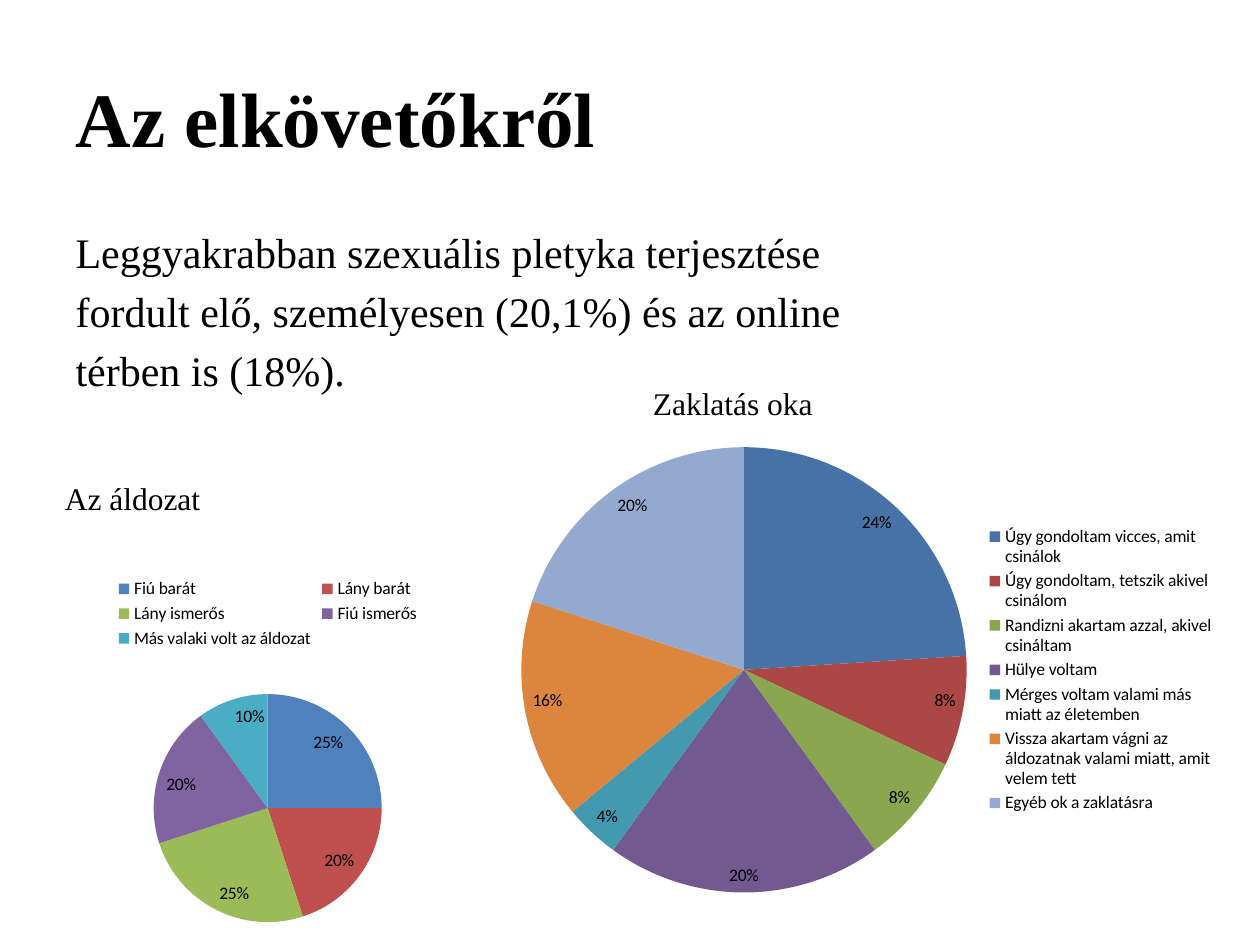
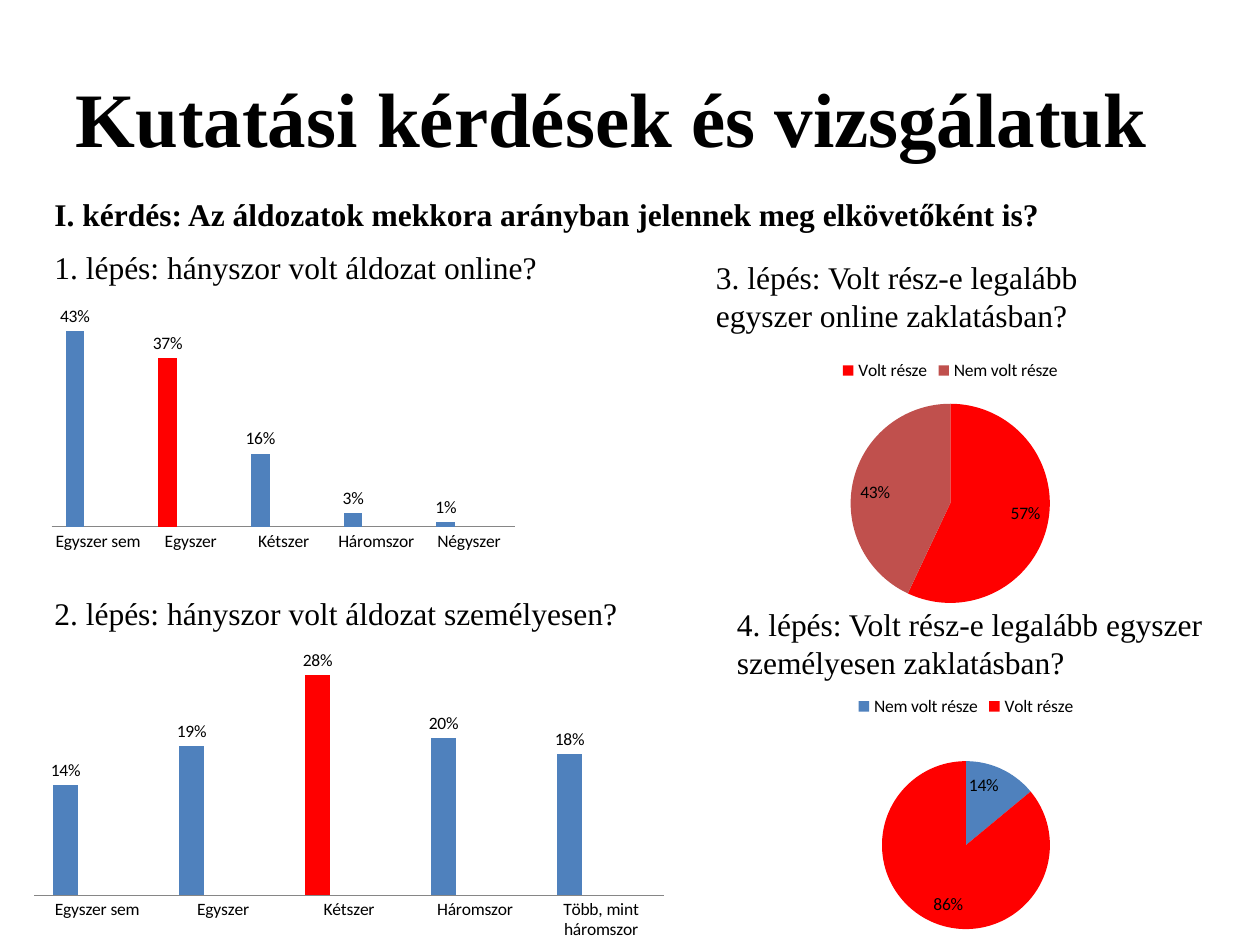
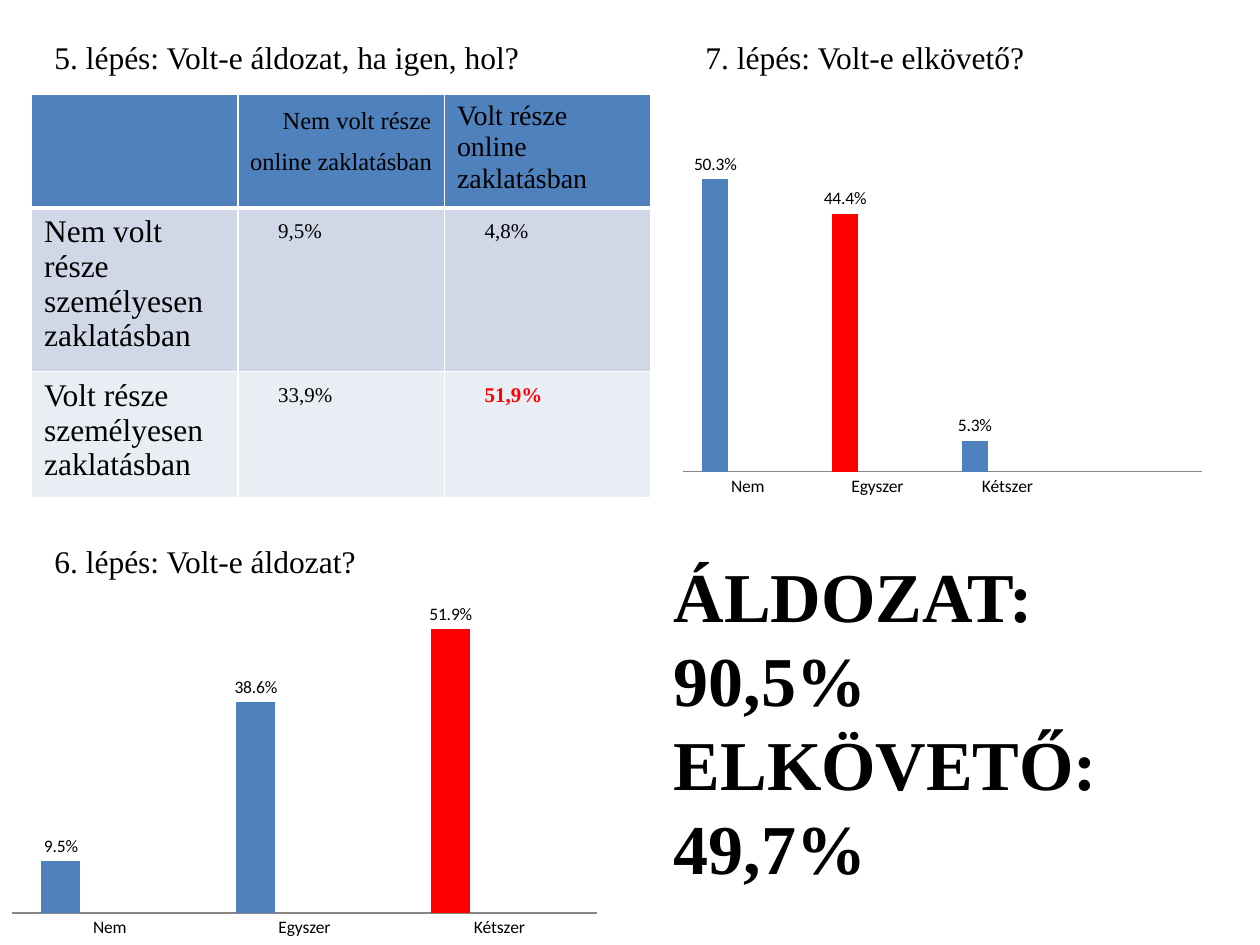
from lxml import etree
from pptx import Presentation
from pptx import util as u
from pptx.chart.data import CategoryChartData
from pptx.dml.color import RGBColor
from pptx.enum import chart as ch, text
from pptx.oxml import parse_xml
from pptx.oxml.ns import nsdecls, qn

SERIF, SANS = "Times New Roman", "Calibri"
BLACK, WHITE, RED, GREY = "000000", "FFFFFF", "FF0000", "868686"
BLUE, BRICK = "4F81BD", "C0504D"
VICTIM_COLOURS = [BLUE, BRICK, "9BBB59", "8064A2", "4BACC6"]
REASON_COLOURS = ["4672A8", "AB4744", "8AA64F", "725990", "4299B0", "DC853E", "93A9CF"]
BANDS = [BLUE, "D0D8E8", "E9EDF4"]
COLS, ROWS = 120, 90  # grid of the slide

prs = Presentation()
prs.slide_width, prs.slide_height = u.Inches(10), u.Inches(7.5)


def rgb(colour):
    return RGBColor.from_string(colour)


def grid(col, row, cols, rows):
    cw, rh = prs.slide_width / COLS, prs.slide_height / ROWS
    return [u.Emu(round(n)) for n in (col * cw, row * rh, cols * cw, rows * rh)]


def write(tf, lines, size=18, bold=False, colour=BLACK):
    """Fill a text frame, one paragraph for each line."""
    tf.word_wrap = True
    for i, line in enumerate(lines.split("\n")):
        p = tf.paragraphs[0] if i == 0 else tf.add_paragraph()
        r = p.add_run()
        r.text = line
        f = r.font
        f.name, f.size, f.bold = SERIF, u.Pt(size), bold
        f.color.rgb = rgb(colour)
    return tf.paragraphs


def place(sp, box):
    sp.left, sp.top, sp.width, sp.height = grid(*box)


def label(s, box, lines, **fmt):
    tf = s.shapes.add_textbox(*grid(*box)).text_frame
    write(tf, lines, **fmt)
    tf.auto_size = text.MSO_AUTO_SIZE.SHAPE_TO_FIT_TEXT


def title(s, line):
    sp = s.shapes.title
    place(sp, (6, 3.6, 108, 15))
    for p in write(sp.text_frame, line, size=44, bold=True):
        p.alignment = text.PP_ALIGN.LEFT


def body(s, lines):
    sp = s.placeholders[1]
    place(sp, (6, 21, 108, 59.4))
    for p in write(sp.text_frame, lines, size=24):
        etree.SubElement(p._p.get_or_add_pPr(), qn("a:buNone"))


# Charts

def add_chart(s, kind, box, cats, series):
    data = CategoryChartData()
    data.categories = cats
    for n, vals in enumerate(series, 1):
        data.add_series(f"Series {n}", vals)
    chart = s.shapes.add_chart(kind, *grid(*box), data).chart
    chart.has_title = chart.has_legend = False
    f = chart.font
    f.name, f.size, f.color.rgb = SANS, u.Pt(10), rgb(BLACK)
    return chart


def paint(fmt, colour):
    fmt.fill.solid()
    fmt.fill.fore_color.rgb = rgb(colour)


def columns(s, box, cats, vals, marked, fmt="0%"):
    """Column chart with one marked column and two empty series beside it."""
    empty = [None] * len(cats)
    chart = add_chart(s, ch.XL_CHART_TYPE.COLUMN_CLUSTERED, box, cats, [vals, empty, empty])
    plot = chart.plots[0]
    plot.gap_width, plot.overlap, plot.vary_by_categories = 150, -25, False
    ser = plot.series[0]
    paint(ser.format, BLUE)
    paint(ser.points[marked].format, RED)
    dl = ser.data_labels
    dl.show_value = True
    dl.number_format, dl.number_format_is_linked = fmt, False
    dl.position = ch.XL_LABEL_POSITION.OUTSIDE_END
    chart.value_axis.visible = chart.value_axis.has_major_gridlines = False
    chart.value_axis.minimum_scale = 0
    axis = chart.category_axis
    axis.major_tick_mark = ch.XL_TICK_MARK.NONE
    axis.format.line.color.rgb = rgb(GREY)


def pie(s, box, cats, vals, colours, top=None):
    """Pie chart; top is the pie's share from the top, with the legend above."""
    chart = add_chart(s, ch.XL_CHART_TYPE.PIE, box, cats, [vals])
    chart.has_legend = True
    chart.legend.include_in_layout = False
    pos = ch.XL_LEGEND_POSITION
    chart.legend.position = pos.TOP if top else pos.RIGHT
    plot = chart.plots[0]
    plot.vary_by_categories = True
    for i, colour in enumerate(colours):
        paint(plot.series[0].points[i].format, colour)
    dl = plot.series[0].data_labels
    dl.show_percentage, dl.show_value = True, False
    dl.number_format, dl.number_format_is_linked = "0%", False
    dl.position = ch.XL_LABEL_POSITION.INSIDE_END
    if top:
        area = chart._chartSpace.chart.plotArea
        for old in area.findall(qn("c:layout")):
            area.remove(old)
        parts = {"x": 0.1, "y": top, "w": 0.8, "h": round(0.94 - top, 2)}
        sizes = "".join(f'<c:{k} val="{v}"/>' for k, v in parts.items())
        area.insert(0, parse_xml(
            f'<c:layout {nsdecls("c")}><c:manualLayout><c:layoutTarget val="inner"/>'
            f'<c:xMode val="edge"/><c:yMode val="edge"/>{sizes}</c:manualLayout></c:layout>'))


# Table

def borders(cell, bottom):
    tcPr = cell._tc.get_or_add_tcPr()
    for i, (side, pts) in enumerate(zip("LRTB", (1, 1, 1, bottom))):
        tcPr.insert(i, parse_xml(
            f'<a:ln{side} {nsdecls("a")} w="{u.Pt(pts)}"><a:solidFill>'
            f'<a:srgbClr val="{WHITE}"/></a:solidFill></a:ln{side}>'))


def victim_table(s, box):
    rows = [["", "Nem volt része online zaklatásban", "Volt része online zaklatásban"],
            ["Nem volt része személyesen zaklatásban", "9,5%", "4,8%"],
            ["Volt része személyesen zaklatásban", "33,9%", "51,9%"]]
    sizes = [[18, 14, 16], [18, 12, 12], [18, 12, 12]]
    tbl = s.shapes.add_table(3, 3, *grid(*box)).table
    tbl.first_row = tbl.horz_banding = False
    for row, share in zip(tbl.rows, (0.28, 0.4, 0.32)):
        row.height = round(grid(*box)[3] * share)
    for i, line in enumerate(rows):
        for j, words in enumerate(line):
            cell = tbl.cell(i, j)
            paint(cell, BANDS[i])
            borders(cell, 3 if i == 0 else 1)
            if not words:
                continue
            key = words == "51,9%"
            p = write(cell.text_frame, words, size=sizes[i][j], bold=key,
                      colour=RED if key else BLACK)[0]
            if j and (i, j) != (0, 2):  # indented cells
                cell.margin_left = cell.margin_right = u.Inches(0.07)
                cell.margin_top = cell.margin_bottom = 0
                p.line_spacing, p.space_after = 1.5, u.Pt(10)
                p._p.get_or_add_pPr().set("indent", str(u.Inches(0.25)))
                if i == 0:
                    p.alignment = text.PP_ALIGN.CENTER


# Slides

def offenders():
    s = prs.slides.add_slide(prs.slide_layouts[1])
    title(s, "Az elkövetőkről")
    body(s, "Leggyakrabban szexuális pletyka terjesztése\n"
            "fordult elő, személyesen (20,1%) és az online\n"
            "térben is (18%).")
    pie(s, (-4, 53.8, 59, 36.2),
        ["Fiú barát", "Lány barát", "Lány ismerős", "Fiú ismerős", "Más valaki volt az áldozat"],
        [25, 20, 25, 20, 10], VICTIM_COLOURS, top=0.34)
    pie(s, (48, 35, 68.9, 57.6),
        ["Úgy gondoltam vicces, amit csinálok", "Úgy gondoltam, tetszik akivel csinálom",
         "Randizni akartam azzal, akivel csináltam", "Hülye voltam",
         "Mérges voltam valami más miatt az életemben",
         "Vissza akartam vágni az áldozatnak valami miatt, amit velem tett",
         "Egyéb ok a zaklatásra"],
        [24, 8, 8, 20, 4, 16, 20], REASON_COLOURS)
    label(s, (5, 45, 23, 4.8), "Az áldozat")
    label(s, (61, 36, 25, 5), "Zaklatás oka")


def questions():
    s = prs.slides.add_slide(prs.slide_layouts[5])
    title(s, "Kutatási kérdések és vizsgálatuk")
    label(s, (4, 18, 110, 4.8),
          "I. kérdés: Az áldozatok mekkora arányban jelennek meg elkövetőként is?", bold=True)
    # Left: how many times
    times = ["Egyszer sem", "Egyszer", "Kétszer", "Háromszor"]
    columns(s, (4, 28, 46, 25), times + ["Négyszer"], [0.43, 0.37, 0.16, 0.03, 0.01], 1)
    label(s, (4, 23, 52, 4.8), "1. lépés: hányszor volt áldozat online?")
    columns(s, (2, 62, 62.5, 28), times + ["Több, mint háromszor"],
            [0.14, 0.19, 0.28, 0.2, 0.18], 2)
    label(s, (4, 56, 58, 4.8), "2. lépés: hányszor volt áldozat személyesen?")
    # Right: at least once
    pie(s, (67, 33, 47, 26), ["Volt része", "Nem volt része"], [57, 43], [RED, BRICK], top=0.21)
    label(s, (67, 24, 39, 8.5), "3. lépés: Volt rész-e legalább egyszer online zaklatásban?")
    label(s, (69, 57, 48, 8.5), "4. lépés: Volt rész-e legalább egyszer személyesen zaklatásban?")
    pie(s, (69, 65, 46, 25), ["Nem volt része", "Volt része"], [14, 86], [BLUE, RED], top=0.3)


def results():
    s = prs.slides.add_slide(prs.slide_layouts[6])
    answers = ["Nem", "Egyszer", "Kétszer"]
    victim_table(s, (3, 9, 59, 35.7))
    label(s, (4, 3, 56, 4.8), "5. lépés: Volt-e áldozat, ha igen, hol?")
    columns(s, (0, 55, 58, 35), answers, [0.095, 0.386, 0.519], 2, "0.0%")
    label(s, (4, 51, 45, 4.8), "6. lépés: Volt-e áldozat?")
    columns(s, (64, 11, 51.5, 37), answers + [""], [0.503, 0.444, 0.053, None], 1, "0.0%")
    label(s, (66, 3, 39, 4.8), "7. lépés: Volt-e elkövető?")
    label(s, (63, 52, 44, 33.5), "ÁLDOZAT: 90,5%\nELKÖVETŐ: 49,7%", size=40, bold=True)


if __name__ == "__main__":
    offenders()
    questions()
    results()
    prs.save("out.pptx")
